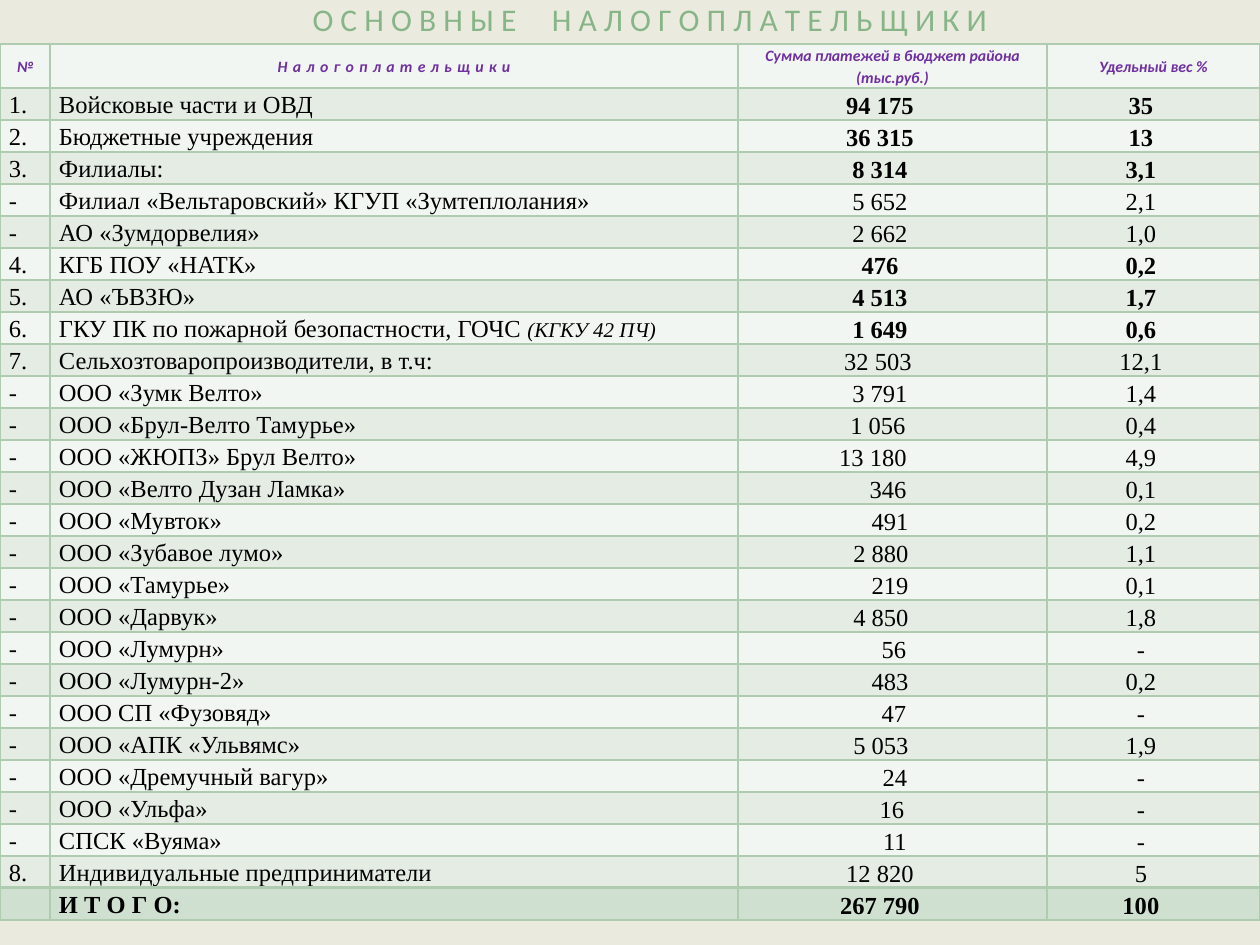
from lxml.etree import SubElement
from pptx import Presentation
from pptx.dml.color import RGBColor
from pptx.enum.text import MSO_ANCHOR as ANCHOR, PP_ALIGN as ALIGN
from pptx.oxml.ns import qn
from pptx.util import Emu, Pt

# Content
TITLE = ["О С Н О В Н Ы Е", "Н А Л О Г О П Л А Т Е Л Ь Щ И К И"]
HEADERS = ["№", "Налогоплательщики",
           "Сумма платежей в бюджет района (тыс.руб.)", "Удельный вес %"]
# number, taxpayer, amount, share, bold figures, shift of the amount in px
ROWS = [
    ("1.", "Войсковые части и ОВД", "94 175", "35", True, 0),
    ("2.", "Бюджетные учреждения", "36 315", "13", True, 0),
    ("3.", "Филиалы:", "8 314", "3,1", True, 0),
    ("-", "Филиал «Вельтаровский» КГУП «Зумтеплолания»", "5 652", "2,1", False, 0),
    ("-", "АО «Зумдорвелия»", "2 662", "1,0", False, 0),
    ("4.", "КГБ ПОУ «НАТК»", "476", "0,2", True, 0),
    ("5.", "АО «ЪВЗЮ»", "4 513", "1,7", True, 0),
    ("6.", "ГКУ ПК по пожарной безопастности, ГОЧС ", "1 649", "0,6", True, 0),
    ("7.", "Сельхозтоваропроизводители, в т.ч:", "32 503", "12,1", False, -2),
    ("-", "ООО «Зумк Велто»", "3 791", "1,4", False, 0),
    ("-", "ООО «Брул-Велто Тамурье»", "1 056", "0,4", False, -2),
    ("-", "ООО «ЖЮПЗ» Брул Велто»", "13 180", "4,9", False, -7),
    ("-", "ООО «Велто Дузан Ламка»", "346", "0,1", False, 8),
    ("-", "ООО «Мувток»", "491", "0,2", False, 10),
    ("-", "ООО «Зубавое лумо»", "2 880", "1,1", False, 1),
    ("-", "ООО «Тамурье»", "219", "0,1", False, 10),
    ("-", "ООО «Дарвук»", "4 850", "1,8", False, 1),
    ("-", "ООО «Лумурн»", "56", "-", False, 14),
    ("-", "ООО «Лумурн-2»", "483", "0,2", False, 10),
    ("-", "ООО СП «Фузовяд»", "47", "-", False, 14),
    ("-", "ООО «АПК «Ульвямс»", "5 053", "1,9", False, 1),
    ("-", "ООО «Дремучный вагур»", "24", "-", False, 15),
    ("-", "ООО «Ульфа»", "16", "-", False, 12),
    ("-", "СПСК «Вуяма»", "11", "-", False, 15),
    ("8.", "Индивидуальные предприниматели", "12 820", "5", False, 0),
    ("", "И Т О Г О:", "267 790", "100", True, 0),
]
FIRE_ROW, FIRE_NOTE = 8, "(КГКУ 42 ПЧ)"

COLORS = {"bg": "EAEBDE", "title": "88B588", "head": "7030A0", "text": "000000",
          "light": "F2F6F2", "band": "E4ECE4", "total": "D0E0D0", "line": "B0CCB0"}
COLS = [50, 688, 309, 213]
HEAD_H, ROW_H = 44, 32
PAD, FIGURE_PAD = 9, 34
W, H = 1260, 945


def px(n):
    return Emu(round(n * 914400 / 126))


def rgb(name):
    return RGBColor.from_string(COLORS[name])


def add_run(p, text, size=14, font="Times New Roman", color="text",
            bold=False, italic=False, spacing=0):
    r = p.add_run()
    r.text = text
    f = r.font
    f.size, f.name, f.bold, f.italic = Pt(size), font, bold, italic
    f.color.rgb = rgb(color)
    if spacing:
        r._r.get_or_add_rPr().set("spc", str(round(spacing * 100)))


def set_borders(cell, top, bottom):
    tcPr = cell._tc.get_or_add_tcPr()
    for i, (side, width) in enumerate([("L", 1), ("R", 1), ("T", top), ("B", bottom)]):
        ln = tcPr.makeelement(qn(f"a:ln{side}"), {"w": str(Pt(width))})
        fill = SubElement(ln, qn("a:solidFill"))
        SubElement(fill, qn("a:srgbClr"), val=COLORS["line"])
        tcPr.insert(i, ln)


def format_cell(cell, fill, left=PAD, right=PAD, align=ALIGN.CENTER,
                anchor=ANCHOR.MIDDLE, top=1, bottom=1):
    cell.fill.solid()
    cell.fill.fore_color.rgb = rgb(fill)
    cell.margin_left, cell.margin_right = px(left), px(right)
    cell.margin_top = cell.margin_bottom = 0
    cell.vertical_anchor = anchor
    set_borders(cell, top, bottom)
    p = cell.text_frame.paragraphs[0]
    p.alignment, p.line_spacing = align, 1.15
    return p


prs = Presentation()
prs.slide_width, prs.slide_height = px(W), px(H)
s = prs.slides.add_slide(prs.slide_layouts[5])
s.background.fill.solid()
s.background.fill.fore_color.rgb = rgb("bg")

# Title: one widened space parts the two words
title = s.shapes.title
title.left, title.top, title.width, title.height = 0, 0, px(W), px(37)
tf = title.text_frame
tf.word_wrap = True
tf.vertical_anchor = ANCHOR.MIDDLE
tf.margin_left, tf.margin_right = px(40), 0
tf.margin_top = tf.margin_bottom = 0
p = tf.paragraphs[0]
p.alignment = ALIGN.CENTER
title_format = dict(size=18, font="Calibri", color="title")
add_run(p, TITLE[0], **title_format)
add_run(p, " ", spacing=16, **title_format)
add_run(p, TITLE[1], **title_format)

# Table grid
table = s.shapes.add_table(len(ROWS) + 1, len(COLS), 0, px(44), px(W),
                           px(HEAD_H + ROW_H * len(ROWS))).table
table.horz_banding = False
for column, width in zip(table.columns, COLS):
    column.width = px(width)
for i, row in enumerate(table.rows):
    row.height = px(ROW_H if i else HEAD_H)

# Header row
for c, text in enumerate(HEADERS):
    p = format_cell(table.cell(0, c), "light", left=5, right=5)
    add_run(p, text, size=9, font="Calibri", color="head", bold=True,
            italic=True, spacing=3 if c == 1 else 0)

# Taxpayers and the total
last = len(ROWS)
for i, (*texts, bold, shift) in enumerate(ROWS, 1):
    fill = "total" if i == last else "band" if i % 2 else "light"
    edges = dict(top=2 if i == last else 1, bottom=2 if i == last - 1 else 1)
    for c, text in enumerate(texts):
        cell = table.cell(i, c)
        if c < 2:
            p = format_cell(cell, fill, align=ALIGN.JUSTIFY, anchor=ANCHOR.TOP, **edges)
        else:
            right = FIGURE_PAD - (2 * shift if c == 2 else 0)
            p = format_cell(cell, fill, right=right, **edges)
        if text:
            add_run(p, text, bold=bold and (c > 1 or i == last))
        else:
            SubElement(p._p, qn("a:endParaRPr"), sz="1400")
add_run(table.cell(FIRE_ROW, 1).text_frame.paragraphs[0], FIRE_NOTE, size=12, italic=True)

prs.save("out.pptx")
